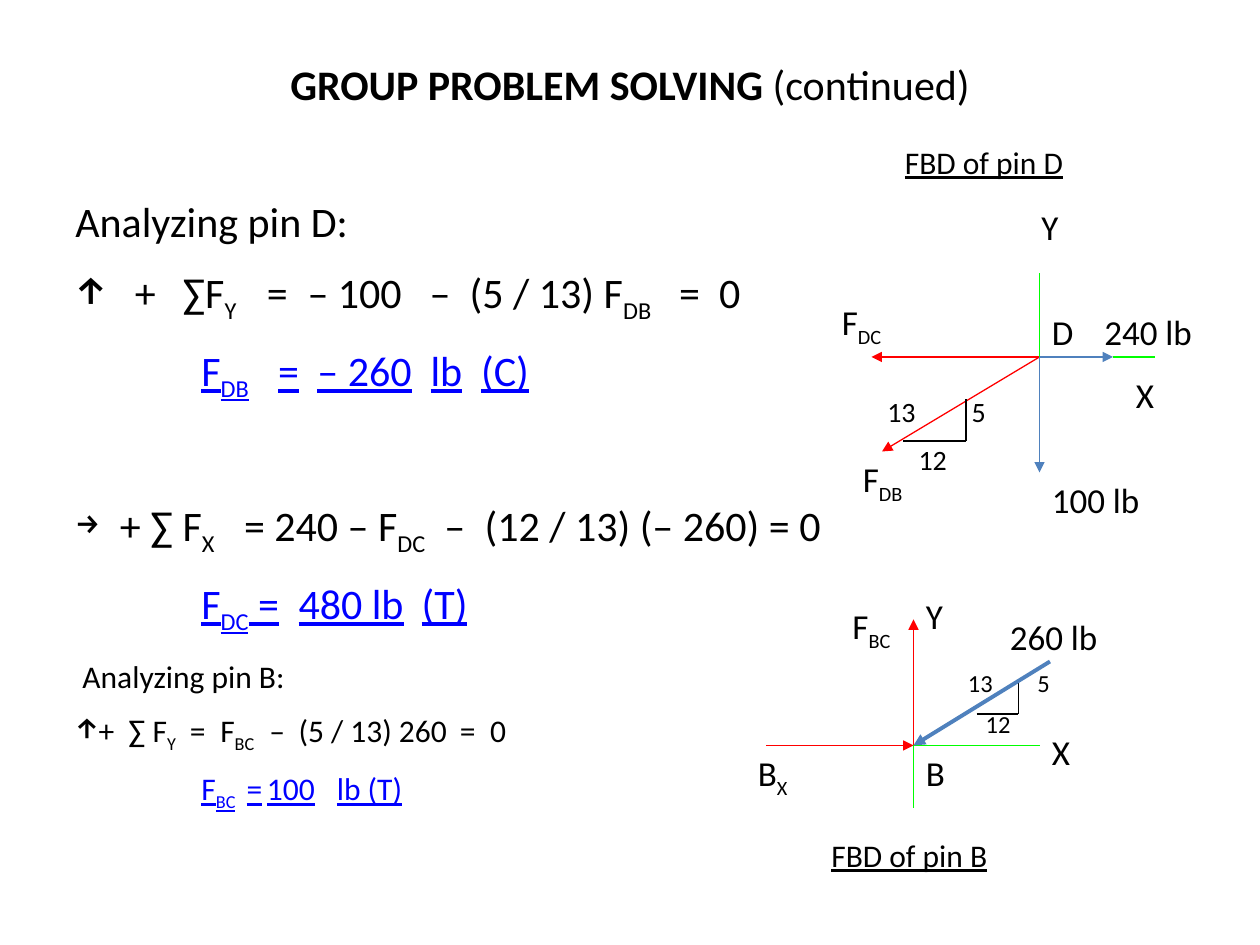
from typing import NamedTuple

from lxml.etree import SubElement
from pptx import Presentation
from pptx.dml.color import RGBColor
from pptx.enum.shapes import MSO_CONNECTOR
from pptx.enum.text import MSO_AUTO_SIZE, PP_ALIGN
from pptx.oxml.ns import qn
from pptx.util import Cm, Pt

BLACK = RGBColor(0x00, 0x00, 0x00)
BLUE = RGBColor(0x00, 0x00, 0xFF)
STEEL = RGBColor(0x4F, 0x81, 0xBD)
RED = RGBColor(0xFF, 0x00, 0x00)
GREEN = RGBColor(0x00, 0xFF, 0x00)
FONT = "Calibri"


class Para(NamedTuple):
    text: str  # parts between ~ marks are subscripts
    size: int = 20
    tabs: tuple = ()  # tab stops in cm
    mark: str = ""  # bullet sign
    color: RGBColor = BLACK
    line: bool = False
    lead: int = 0  # size of an opening tab, if it differs


class Box(NamedTuple):
    x: float
    y: float
    w: float
    h: float
    paras: tuple


class Ray(NamedTuple):
    x1: float
    y1: float
    x2: float
    y2: float
    color: RGBColor
    head: bool = False
    width: float = 0.75


def grid(n: float) -> Cm:
    """The layout grid has twelve steps to 2.54 cm."""
    return Cm(n * 2.54 / 12)


def add_run(para, text: str, size: int, sub: bool = False,
            color: RGBColor = BLACK, **extra) -> None:
    run = para.add_run()
    run.text = text
    form = {"name": FONT, "size": Pt(size), **extra}
    for key, val in form.items():
        setattr(run.font, key, val)
    run.font.color.rgb = color
    if sub:
        run._r.get_or_add_rPr().set("baseline", "-25000")


def add_frame(shapes, x: float, y: float, w: float, h: float):
    box = shapes.add_textbox(*map(grid, (x, y, w, h)))
    frame = box.text_frame
    form = {"word_wrap": True, "auto_size": MSO_AUTO_SIZE.SHAPE_TO_FIT_TEXT}
    for key, val in form.items():
        setattr(frame, key, val)
    return frame


def fill_para(para, item: Para) -> None:
    props = para._p.get_or_add_pPr()
    if item.mark:
        SubElement(props, qn("a:buChar"), char=item.mark)
    if item.tabs:
        stops = SubElement(props, qn("a:tabLst"))
        for pos in item.tabs:
            SubElement(stops, qn("a:tab"), pos=str(Cm(pos)), algn="l")
    text = item.text
    if text.startswith("\t"):
        add_run(para, "\t", item.lead or item.size)
        text = text[1:]
    for i, part in enumerate(text.split("~")):
        if part:
            add_run(para, part, item.size, i % 2 == 1, item.color,
                    underline=item.line)


def draw_box(shapes, box: Box) -> None:
    frame = add_frame(shapes, *box[:4])
    for i, item in enumerate(box.paras):
        para = frame.add_paragraph() if i else frame.paragraphs[0]
        if i:
            para.space_before = Pt(item.size / 2)
        fill_para(para, item)


def draw_ray(shapes, ray: Ray) -> None:
    link = shapes.add_connector(MSO_CONNECTOR.STRAIGHT, *map(grid, ray[:4]))
    link.line.color.rgb = ray.color
    link.line.width = Pt(ray.width)
    if ray.head:
        SubElement(link.line._get_or_add_ln(), qn("a:tailEnd"), type="triangle")
    SubElement(link._element.spPr, qn("a:effectLst"))


def label(x: float, y: float, w: float, text: str) -> Box:
    return Box(x, y, w, 5.2, (Para(text),))


def head(x: float, y: float, w: float, text: str) -> Box:
    return Box(x, y, w, 5.6, (Para(text, 18, line=True),))


def result(text: str, size: int, *tabs: float) -> Para:
    return Para("\t" + text, size, (2.54, *tabs), color=BLUE, line=True)


# Equations
WORK = (
    Box(6, 18, 73, 20.4, (
        Para("Analyzing pin D:", 24),
        Para("\t+\t∑F~Y~\t=\t– 100\t–\t(5 / 13) F~DB~\t=\t0", 24,
             (1.2, 2.16, 3.86, 4.68, 7.14, 7.95, 12.17, 12.98), "↑"),
        result("F~DB~\t=\t– 260\tlb\t(C)", 24, 4.09, 4.88, 7.16, 8.18),
    )),
    Box(6, 47, 108, 13.2, (
        Para("\t+ ∑ F~X~\t= 240 – F~DC~\t–\t(12 / 13) (– 260) = 0", 24,
             (0.9, 3.4, 7.44, 8.25), "→", lead=18),
        result("F~DC~ =\t480 lb\t(T)", 24, 4.5, 6.98),
    )),
    Box(6, 62, 68, 18.8, (
        Para(" Analyzing pin B:", 18),
        Para("+\t∑ F~Y~\t=\tF~BC~\t–\t(5 / 13) 260\t=\t0", 18,
             (1.07, 2.31, 2.92, 3.91, 4.5, 7.75, 8.36), "↑"),
        result("F~BC~\t=\t100\tlb (T)", 18, 3.45, 3.86, 5.27),
    )),
)

# Forces and labels at pin D
PIN_D = (
    Ray(99, 34, 83, 34, RED, True),
    Ray(99, 34, 84, 43, RED, True),
    Ray(99, 34, 99, 45, STEEL, True),
    Ray(99, 34, 106, 34, STEEL, True),
    Ray(106, 34, 110, 34, GREEN),
    Ray(99, 34, 99, 26, GREEN),
    Ray(86, 42, 92, 42, BLACK),
    Ray(92, 42, 92, 38, BLACK),
    label(81, 43, 13, "F~DB~"),
    label(98, 19, 7, "Y"),
    label(99, 29, 6, "D"),
    label(79, 28, 13, "F~DC~"),
    label(104, 29, 11, "240 lb"),
    label(107, 35, 5, "X"),
    label(99, 45, 13, "100 lb"),
    Box(82, 37, 20, 9.2, (Para("\t13\t5", 16, (0.28, 1.98)),
                          Para("\t12", 16, (0.91,)))),
    head(85, 13, 29, "FBD of pin D"),
)

# Forces and labels at pin B
PIN_B = (
    Ray(93, 68, 97, 68, BLACK),
    Ray(97, 68, 97, 65, BLACK),
    Ray(87, 71, 87, 59, RED, True),
    Ray(73, 71, 87, 71, RED, True),
    Ray(87, 71, 99, 71, GREEN),
    Ray(100, 63, 87, 71, STEEL, True, 2.25),
    Ray(87, 71, 87, 77, GREEN),
    label(80, 57, 8, "F~BC~"),
    label(87, 56, 6, "Y"),
    label(95, 58, 11, "260 lb"),
    label(71, 71, 7, "B~X~"),
    label(87, 71, 5, "B"),
    label(99, 69, 5, "X"),
    Box(91, 63, 11, 8.2, (Para("13\t5", 14, (1.4,)),
                          Para("\t12", 14, (0.36,)))),
    head(78, 79, 23, "FBD of pin B"),
)


def main() -> None:
    deck = Presentation()
    deck.slide_width, deck.slide_height = Cm(25.4), Cm(19.05)
    slide = deck.slides.add_slide(deck.slide_layouts[6])

    # Title
    para = add_frame(slide.shapes, 25.5, 5, 69, 6).paragraphs[0]
    para.alignment = PP_ALIGN.CENTER
    add_run(para, "GROUP PROBLEM SOLVING ", 24, bold=True)
    add_run(para, "(continued)", 24, bold=False)

    for box in WORK:
        draw_box(slide.shapes, box)

    # Free-body diagrams, one group each
    for parts in (PIN_D, PIN_B):
        group = slide.shapes.add_group_shape()
        for part in parts:
            draw = draw_ray if isinstance(part, Ray) else draw_box
            draw(group.shapes, part)

    deck.save("out.pptx")


if __name__ == "__main__":
    main()
